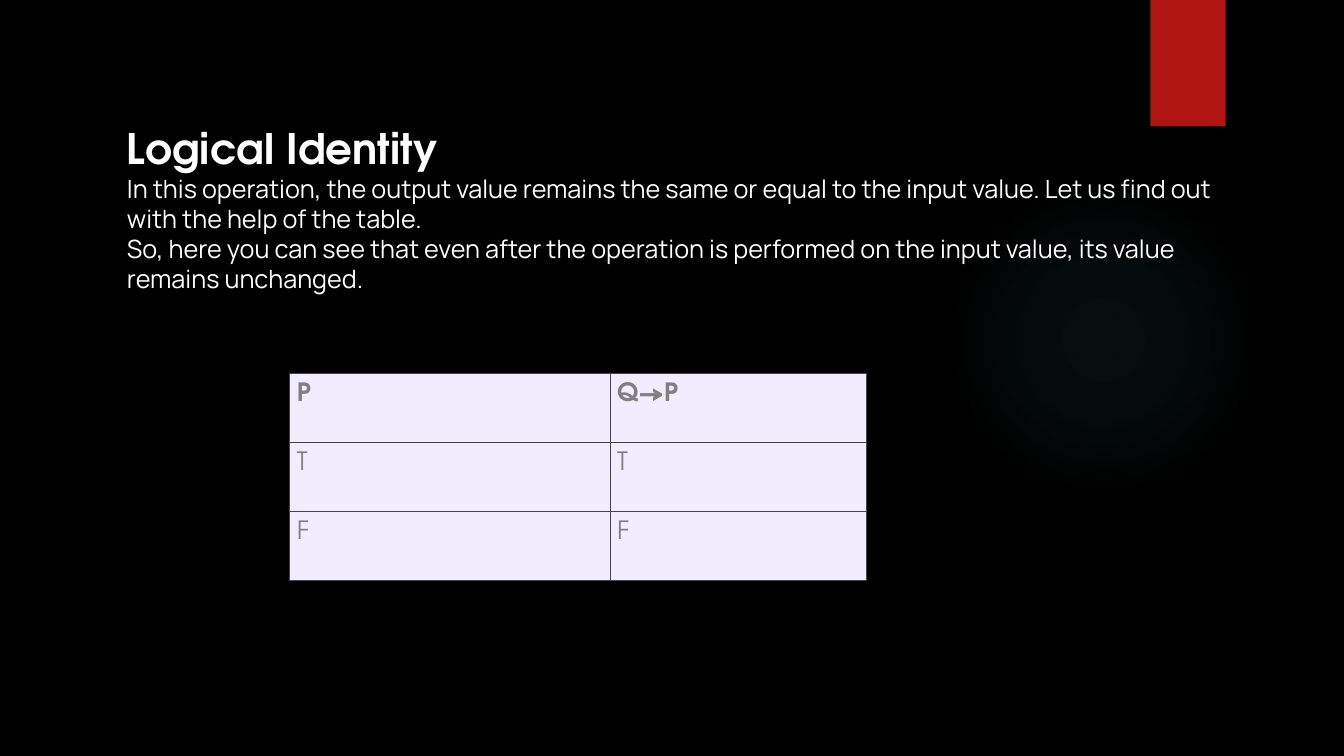
"""Builds the Logical Identity slide with its truth table."""
from lxml.etree import SubElement
from pptx import Presentation
from pptx.dml.color import RGBColor
from pptx.enum.shapes import MSO_SHAPE
from pptx.enum.text import MSO_ANCHOR, PP_ALIGN
from pptx.oxml import parse_xml
from pptx.oxml.ns import nsdecls, qn
from pptx.util import Cm, Pt

TITLE = "Logical Identity"
EXPLANATION = [
    "In this operation, the output value remains the same or equal to the input value. "
    "Let us find out with the help of the table.",
    "So, here you can see that even after the operation is performed on the input value, "
    "its value remains unchanged.",
]
TRUTH_TABLE = [("P", "Q→P"), ("T", "T"), ("F", "F")]
COLUMN_WIDTHS = (8.07, 6.45)
ROW_HEIGHT = 1.74
GLOW_STOPS = [(0, 7), (36, 6), (69, 0)]
HEADING_FONT, BODY_FONT = "TeX Gyre Adventor", "Manrope"
COLORS = {
    "background": "000000", "glow": "50B9C1", "ribbon": "B01513", "text": "FFFFFF",
    "cell": "F1EDFF", "cell_text": "808080", "border": "444444",
}


def color(name):
    return RGBColor.from_string(COLORS[name])


def write(paragraph, text, *, font, size, ink, bold=False, spacing=None):
    paragraph.alignment = PP_ALIGN.LEFT
    if spacing:
        paragraph.line_spacing = Pt(spacing)
    run = paragraph.add_run()
    run.text = text
    run.font.name = font
    run.font.size = Pt(size)
    run.font.bold = bold
    run.font.color.rgb = color(ink)


def add_decoration(slide, outline, left, top, width, height):
    decoration = slide.shapes.add_shape(outline, Cm(left), Cm(top), Cm(width), Cm(height))
    decoration.shadow.inherit = False
    decoration.line.fill.background()
    return decoration


def apply_glow(decoration):
    decoration.fill.background()
    stops = "".join(
        f'<a:gs pos="{position * 1000}"><a:srgbClr val="{COLORS["glow"]}">'
        f'<a:alpha val="{opacity * 1000}"/></a:srgbClr></a:gs>'
        for position, opacity in GLOW_STOPS
    )
    gradient = parse_xml(
        f'<a:gradFill {nsdecls("a")} rotWithShape="1"><a:gsLst>{stops}</a:gsLst>'
        '<a:path path="circle"><a:fillToRect l="50000" t="50000" r="50000" b="50000"/>'
        "</a:path></a:gradFill>"
    )
    properties = decoration._element.spPr
    properties.replace(properties.find(qn("a:noFill")), gradient)


def add_borders(cell, bottom_width):
    properties = cell._tc.get_or_add_tcPr()
    widths = {"lnL": 0.3, "lnR": 0.3, "lnT": 0.3, "lnB": bottom_width}
    for index, (side, width) in enumerate(widths.items()):
        border = SubElement(properties, qn(f"a:{side}"), w=str(Pt(width)))
        fill = SubElement(border, qn("a:solidFill"))
        SubElement(fill, qn("a:srgbClr"), val=COLORS["border"])
        properties.insert(index, border)


def add_truth_table(slide):
    table = slide.shapes.add_table(
        len(TRUTH_TABLE), len(COLUMN_WIDTHS), Cm(7.3), Cm(9.4),
        Cm(sum(COLUMN_WIDTHS)), Cm(ROW_HEIGHT * len(TRUTH_TABLE)),
    ).table
    for column, width in zip(table.columns, COLUMN_WIDTHS):
        column.width = Cm(width)
    last_row = len(TRUTH_TABLE) - 1
    for row, values in enumerate(TRUTH_TABLE):
        table.rows[row].height = Cm(ROW_HEIGHT)
        for column, value in enumerate(values):
            cell = table.cell(row, column)
            cell.margin_left = cell.margin_right = Cm(0.18)
            cell.margin_top = cell.margin_bottom = Cm(0.25)
            cell.vertical_anchor = MSO_ANCHOR.TOP
            cell.fill.solid()
            cell.fill.fore_color.rgb = color("cell")
            add_borders(cell, 0.6 if row == last_row else 0.3)
            write(cell.text_frame.paragraphs[0], value, font=HEADING_FONT, size=18,
                  ink="cell_text", bold=row == 0)


def add_explanation(slide):
    frame = slide.shapes.add_textbox(Cm(2.95), Cm(2.92), Cm(28.32), Cm(11.02)).text_frame
    frame.word_wrap = True
    frame.vertical_anchor = MSO_ANCHOR.TOP
    write(frame.paragraphs[0], TITLE, font=HEADING_FONT, size=30, ink="text",
          bold=True, spacing=37.5)
    for sentence in EXPLANATION:
        write(frame.add_paragraph(), sentence, font=BODY_FONT, size=18, ink="text",
              spacing=21.4)


def main():
    deck = Presentation()
    deck.slide_width, deck.slide_height = Cm(33.87), Cm(19.05)
    slide = deck.slides.add_slide(deck.slide_layouts[6])
    slide.background.fill.solid()
    slide.background.fill.fore_color.rgb = color("background")
    apply_glow(add_decoration(slide, MSO_SHAPE.OVAL, 23.9, 4.65, 7.82, 7.82))
    ribbon = add_decoration(slide, MSO_SHAPE.RECTANGLE, 28.99, 0, 1.9, 3.18)
    ribbon.fill.solid()
    ribbon.fill.fore_color.rgb = color("ribbon")
    add_explanation(slide)
    add_truth_table(slide)
    deck.save("out.pptx")


if __name__ == "__main__":
    main()
